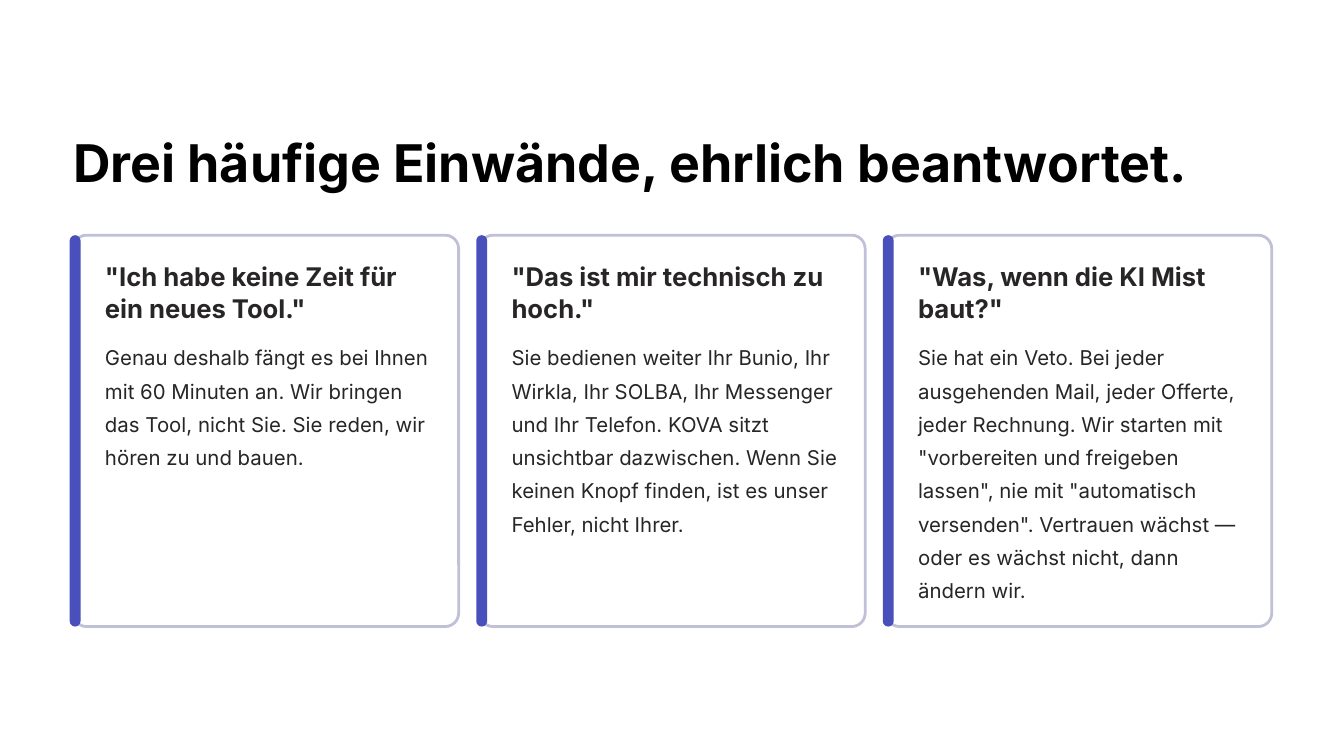
"""Build a slide that answers three common objections in three cards."""
from pptx import Presentation
from pptx.dml.color import RGBColor
from pptx.enum.shapes import MSO_SHAPE as Shape
from pptx.util import Inches, Pt

TITLE = "Drei häufige Einwände, ehrlich beantwortet."
OBJECTIONS = [
    ('"Ich habe keine Zeit für ein neues Tool."',
     "Genau deshalb fängt es bei Ihnen mit 60 Minuten an. Wir bringen das Tool, "
     "nicht Sie. Sie reden, wir hören zu und bauen.", 1.59),
    ('"Das ist mir technisch zu hoch."',
     "Sie bedienen weiter Ihr Bunio, Ihr Wirkla, Ihr SOLBA, Ihr Messenger und Ihr "
     "Telefon. KOVA sitzt unsichtbar dazwischen. Wenn Sie keinen Knopf finden, "
     "ist es unser Fehler, nicht Ihrer.", 2.38),
    ('"Was, wenn die KI Mist baut?"',
     'Sie hat ein Veto. Bei jeder ausgehenden Mail, jeder Offerte, jeder Rechnung. '
     'Wir starten mit "vorbereiten und freigeben lassen", nie mit "automatisch '
     'versenden". Vertrauen wächst — oder es wächst nicht, dann ändern wir.', 3.17),
]

FONT = "Inter"
BLACK = RGBColor(0x00, 0x00, 0x00)
WHITE = RGBColor(0xFF, 0xFF, 0xFF)
INK = RGBColor(0x27, 0x25, 0x25)
INDIGO = RGBColor(0x49, 0x50, 0xBC)
BORDER = RGBColor(0xC0, 0xC1, 0xD7)

LEFT, CARD_TOP, CARD_WIDTH, CARD_HEIGHT = 0.87, 2.8, 4.59, 4.66
CARD_PITCH = 4.84
BAR_OFFSET, BAR_WIDTH = -0.04, 0.13
TEXT_OFFSET, TEXT_WIDTH = 0.38, 3.93


def add_text(slide, text, box, size, leading, color, bold=False, wrap=True):
    frame = slide.shapes.add_textbox(*map(Inches, box)).text_frame
    frame.margin_left = frame.margin_top = frame.margin_right = frame.margin_bottom = 0
    frame.word_wrap = wrap
    paragraph = frame.paragraphs[0]
    paragraph.text = text
    paragraph.line_spacing = Pt(leading)
    paragraph.font.name = FONT
    paragraph.font.size = Pt(size)
    paragraph.font.bold = bold
    paragraph.font.color.rgb = color


def add_rounded(slide, left, width, radius, fill, border=None):
    panel = slide.shapes.add_shape(
        Shape.ROUNDED_RECTANGLE,
        *map(Inches, (left, CARD_TOP, width, CARD_HEIGHT)))
    panel.adjustments[0] = radius
    panel.shadow.inherit = False
    panel.fill.solid()
    panel.fill.fore_color.rgb = fill
    if border is None:
        panel.line.fill.background()
    else:
        panel.line.color.rgb = border
        panel.line.width = Pt(2.4)


def main():
    deck = Presentation()
    deck.slide_width, deck.slide_height = Inches(16), Inches(9)
    slide = deck.slides.add_slide(deck.slide_layouts[6])
    slide.background.fill.solid()
    slide.background.fill.fore_color.rgb = WHITE

    add_text(slide, TITLE, (LEFT, 1.53, 13.32, 0.78), 44.5, 55.5, BLACK,
             bold=True, wrap=False)
    for index, (objection, answer, answer_height) in enumerate(OBJECTIONS):
        left = LEFT + index * CARD_PITCH
        text_left = left + TEXT_OFFSET
        add_rounded(slide, left, CARD_WIDTH, 0.035, WHITE, BORDER)
        add_rounded(slide, left + BAR_OFFSET, BAR_WIDTH, 0.5, INDIGO)
        add_text(slide, objection, (text_left, 3.09, TEXT_WIDTH, 0.78),
                 22, 27.5, INK, bold=True)
        add_text(slide, answer, (text_left, 4.01, TEXT_WIDTH, answer_height),
                 17.5, 28.5, INK)
    deck.save("out.pptx")


if __name__ == "__main__":
    main()
